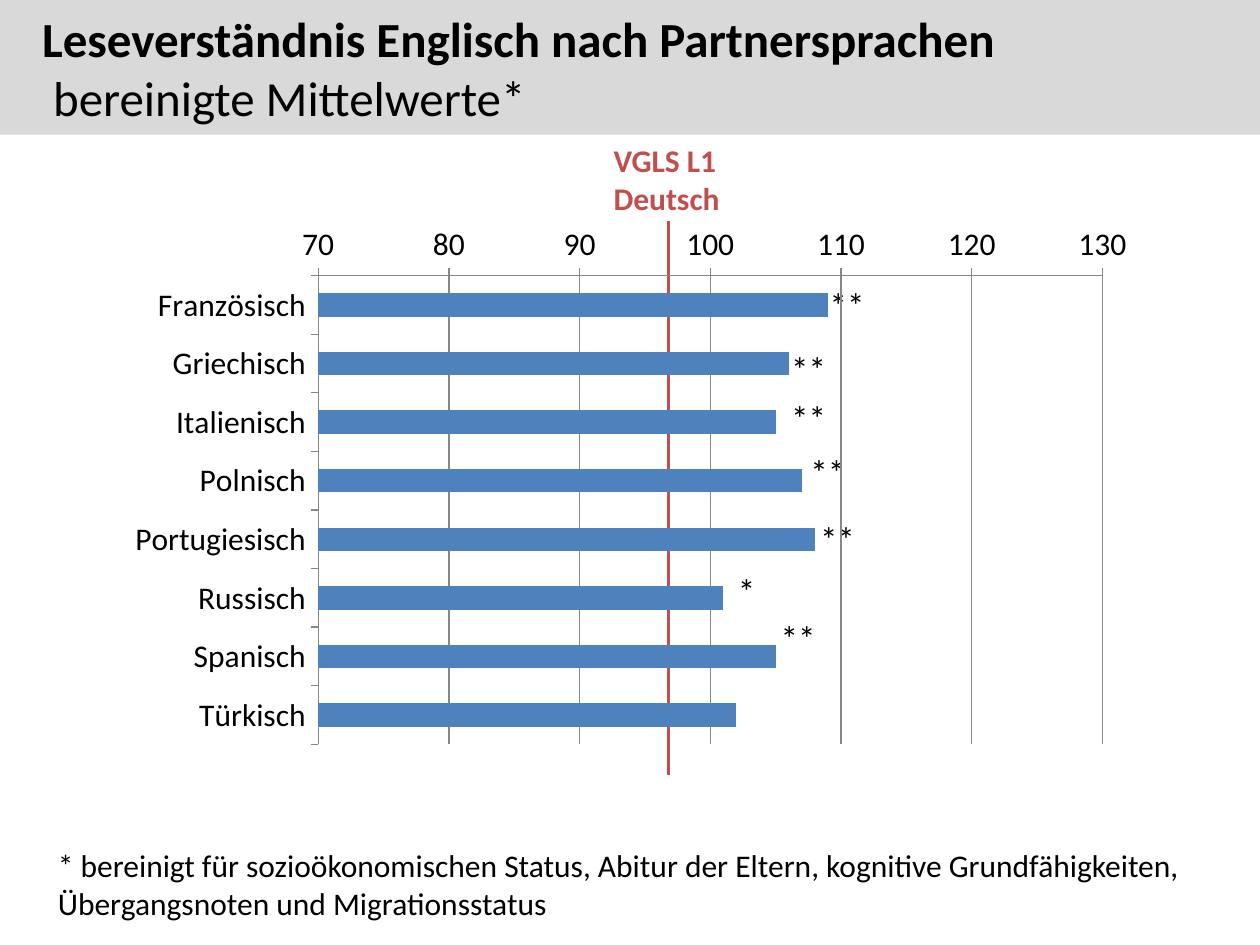
from lxml.etree import SubElement
from pptx import Presentation
from pptx.chart.data import CategoryChartData
from pptx.dml.color import RGBColor
from pptx.enum.chart import XL_CHART_TYPE, XL_TICK_MARK
from pptx.enum.shapes import MSO_CONNECTOR, MSO_SHAPE
from pptx.enum.text import MSO_ANCHOR, PP_ALIGN
from pptx.oxml import parse_xml
from pptx.oxml.ns import nsdecls, qn
from pptx.util import Pt

COLORS = {"text": "000000", "header": "D9D9D9", "bar": "4F81BD", "reference": "C0504D", "grid": "878787"}
SCORES = {
    "Französisch": 109, "Griechisch": 106, "Italienisch": 105, "Polnisch": 107,
    "Portugiesisch": 108, "Russisch": 101, "Spanisch": 105, "Türkisch": 102,
}
SIGNIFICANCE = [
    ("**", 467, 158.5), ("**", 445, 195), ("**", 445, 223), ("**", 456, 254),
    ("**", 461.5, 292), ("*", 414.5, 322), ("**", 439, 349),
]
AXIS_FORMAT = {
    "minimum_scale": 70, "maximum_scale": 130, "major_unit": 10,
    "has_major_gridlines": True, "major_tick_mark": XL_TICK_MARK.OUTSIDE,
}


def rgb(name):
    """Return the named colour."""
    return RGBColor.from_string(COLORS[name])


def set_format(target, values):
    """Set each format value as an attribute of the target."""
    for name, value in values.items():
        setattr(target, name, value)


def set_font(font, size, color="text", bold=False):
    """Apply the slide's typeface with a size, colour and weight."""
    set_format(font, {"name": "Calibri", "size": Pt(size), "bold": bold})
    font.color.rgb = rgb(color)


def add_text(slide, text, left, top, width, height, size=18, color="text", bold=False):
    """Add a wrapping text box with one paragraph."""
    shape = slide.shapes.add_textbox(Pt(left), Pt(top), Pt(width), Pt(height))
    shape.text_frame.word_wrap = True
    run = shape.text_frame.paragraphs[0].add_run()
    run.text = text
    set_font(run.font, size, color, bold)


def add_header(slide, lines):
    """Add the full-width header band with its indented lines."""
    shape = slide.shapes.add_shape(MSO_SHAPE.RECTANGLE, 0, 0, Pt(720), Pt(77))
    shape.shadow.inherit = False
    shape.fill.solid()
    shape.fill.fore_color.rgb = rgb("header")
    shape.line.fill.background()
    frame = shape.text_frame
    set_format(frame, {"vertical_anchor": MSO_ANCHOR.MIDDLE, "word_wrap": True})
    frame.text = "\n".join(text for text, bold in lines)
    for paragraph, (text, bold) in zip(frame.paragraphs, lines):
        paragraph.alignment = PP_ALIGN.LEFT
        paragraph.runs[0].text = text
        paragraph.font.size = Pt(28)
        set_font(paragraph.runs[0].font, 28, bold=bold)
        paragraph._p.get_or_add_pPr().set("marL", str(Pt(17)))


def add_reference_line(slide, x, top, bottom):
    """Add the vertical line of the comparison group."""
    connector = slide.shapes.add_connector(MSO_CONNECTOR.STRAIGHT, Pt(x), Pt(top), Pt(x), Pt(bottom))
    connector.line.color.rgb = rgb("reference")
    connector.line.width = Pt(1.5)
    SubElement(connector._element.spPr, qn("a:effectLst"))


def add_score_chart(slide, left, top, width, height):
    """Add the transparent bar chart of mean scores by language."""
    data = CategoryChartData()
    data.categories = list(SCORES)
    data.add_series("Series 1", list(SCORES.values()))
    chart = slide.shapes.add_chart(
        XL_CHART_TYPE.BAR_CLUSTERED, Pt(left), Pt(top), Pt(width), Pt(height), data
    ).chart
    set_format(chart, {"has_legend": False, "has_title": False})
    set_font(chart.font, 18)
    set_format(chart.category_axis, {"reverse_order": True, "major_tick_mark": XL_TICK_MARK.OUTSIDE})
    set_format(chart.value_axis, AXIS_FORMAT)
    lines = (chart.category_axis.format.line, chart.value_axis.format.line,
             chart.value_axis.major_gridlines.format.line)
    for line in lines:
        line.color.rgb = rgb("grid")
        line.width = Pt(0.75)
    plot = chart.plots[0]
    set_format(plot, {"gap_width": 150, "vary_by_categories": False})
    fill = plot.series[0].format.fill
    fill.solid()
    fill.fore_color.rgb = rgb("bar")
    clear = parse_xml(f"<c:spPr {nsdecls('c', 'a')}><a:noFill/><a:ln><a:noFill/></a:ln></c:spPr>")
    chart._chartSpace.find(qn("c:chart")).addnext(clear)


def main():
    """Build and save the slide."""
    presentation = Presentation()
    set_format(presentation, {"slide_width": Pt(720), "slide_height": Pt(540)})
    slide = presentation.slides.add_slide(presentation.slide_layouts[6])
    add_text(
        slide,
        "* bereinigt für sozioökonomischen Status, Abitur der Eltern, kognitive "
        "Grundfähigkeiten, Übergangsnoten und Migrationsstatus",
        26, 480, 674, 51,
    )
    add_header(slide, [
        ("Leseverständnis Englisch nach Partnersprachen", True),
        (" bereinigte Mittelwerte*", False),
    ])
    add_text(slide, "VGLS L1 Deutsch", 343.5, 77, 107, 51, color="reference", bold=True)
    for stars, left, top in SIGNIFICANCE:
        add_text(slide, stars, left, top, 40, 32, size=20)
    add_reference_line(slide, 382, 126, 443)
    add_score_chart(slide, 65.5, 122.5, 590, 309)
    presentation.save("out.pptx")


if __name__ == "__main__":
    main()
